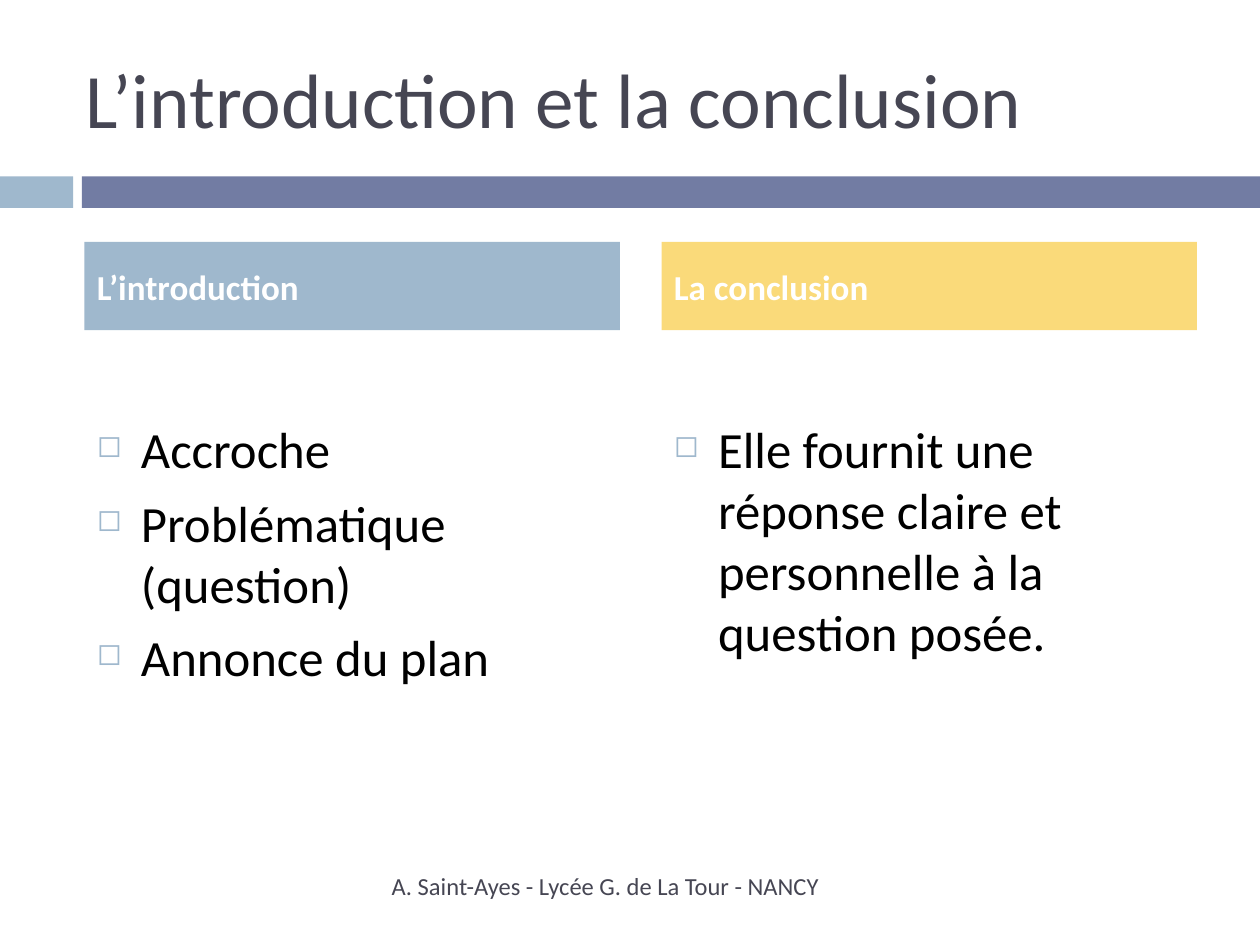
from dataclasses import dataclass

from lxml.etree import SubElement
from pptx import Presentation
from pptx.dml.color import RGBColor
from pptx.enum.shapes import MSO_SHAPE
from pptx.enum.text import MSO_ANCHOR, PP_ALIGN
from pptx.oxml.ns import qn
from pptx.util import Inches, Pt

FONT = "Calibri"
BLUE = "9FB8CD"
INK = "464653"
WIDTH = 4.25


@dataclass
class Box:
    left: float
    top: float
    width: float
    height: float

    def emu(self) -> list:
        return [Inches(v) for v in (self.left, self.top, self.width, self.height)]


@dataclass
class Column:
    left: float
    fill: str
    head: str
    items: list[str]


COLUMNS = [
    Column(0.67, BLUE, "L’introduction",
           ["Accroche", "Problématique (question)", "Annonce du plan"]),
    Column(5.25, "FADA7A", "La conclusion",
           ["Elle fournit une réponse claire et personnelle à la question posée."]),
]


def color(code: str) -> RGBColor:
    return RGBColor.from_string(code)


def style(para, text: str, size: int, code: str, bold: bool = False) -> None:
    para.text = text
    para.font.name = FONT
    para.font.size = Pt(size)
    para.font.bold = bold
    para.font.color.rgb = color(code)


def add_bar(slide, box: Box, fill: str):
    bar = slide.shapes.add_shape(MSO_SHAPE.RECTANGLE, *box.emu())
    bar.shadow.inherit = False
    bar.fill.solid()
    bar.fill.fore_color.rgb = color(fill)
    bar.line.fill.background()
    return bar


def add_text(slide, box: Box, anchor=MSO_ANCHOR.MIDDLE):
    frame = slide.shapes.add_textbox(*box.emu()).text_frame
    frame.word_wrap = True
    frame.vertical_anchor = anchor
    return frame


def add_bullet(para) -> None:
    props = para._p.get_or_add_pPr()
    props.set("marL", str(Inches(0.35)))
    props.set("indent", str(-Inches(0.35)))
    tint = SubElement(props, qn("a:buClr"))
    SubElement(tint, qn("a:srgbClr"), val=BLUE)
    SubElement(props, qn("a:buSzPct"), val="60000")
    SubElement(props, qn("a:buChar"), char="◻")


def add_column(slide, col: Column) -> None:
    frame = add_text(slide, Box(col.left, 3.27, WIDTH, 3.32), MSO_ANCHOR.TOP)
    for i, item in enumerate(col.items):
        para = frame.add_paragraph() if i else frame.paragraphs[0]
        style(para, item, 29, "000000")
        para.space_before = Pt(7 if i else 0)
        add_bullet(para)
    head = add_bar(slide, Box(col.left, 1.92, WIDTH, 0.7), col.fill)
    head.text_frame.vertical_anchor = MSO_ANCHOR.MIDDLE
    para = head.text_frame.paragraphs[0]
    style(para, col.head, 20, "FFFFFF", True)
    para.alignment = PP_ALIGN.LEFT


def main() -> None:
    deck = Presentation()
    deck.slide_width, deck.slide_height = Inches(10), Inches(7.5)
    slide = deck.slides.add_slide(deck.slide_layouts[6])

    add_bar(slide, Box(0, 1.4, 0.58, 0.25), BLUE)
    add_bar(slide, Box(0.65, 1.4, 9.35, 0.25), "727CA3")
    title = add_text(slide, Box(0.58, 0.3, 8.92, 0.95))
    style(title.paragraphs[0], "L’introduction et la conclusion", 44, INK)
    for col in COLUMNS:
        add_column(slide, col)
    foot = add_text(slide, Box(0.67, 6.83, 5.93, 0.4)).paragraphs[0]
    style(foot, "A. Saint-Ayes - Lycée G. de La Tour - NANCY", 14, INK)
    foot.alignment = PP_ALIGN.RIGHT

    deck.save("out.pptx")


if __name__ == "__main__":
    main()
